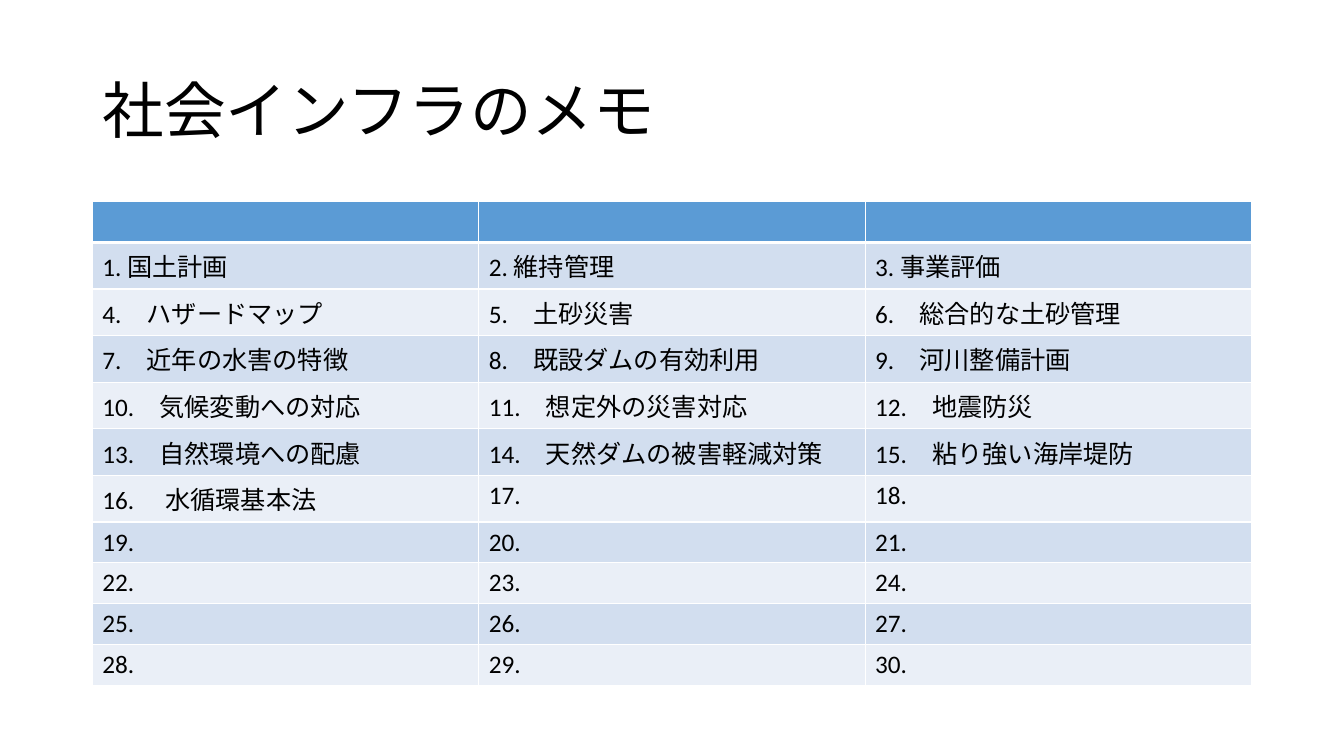
from dataclasses import dataclass

from lxml import etree
from pptx import Presentation
from pptx.dml.color import RGBColor
from pptx.enum.lang import MSO_LANGUAGE_ID
from pptx.enum.text import MSO_ANCHOR, MSO_AUTO_SIZE, PP_ALIGN
from pptx.oxml.ns import qn
from pptx.slide import Slide
from pptx.table import Table, _Cell
from pptx.text.text import TextFrame
from pptx.util import Pt

LEFT = PP_ALIGN.LEFT
MIDDLE = MSO_ANCHOR.MIDDLE
NO_AUTOFIT = MSO_AUTO_SIZE.NONE
JAPANESE = MSO_LANGUAGE_ID.JAPANESE
TITLE_ONLY = 5


@dataclass(frozen=True)
class Theme:
    font: str = "Calibri"
    title_size: float = 44
    cell_size: float = 18
    text: str = "000000"
    header: str = "5B9BD5"
    bands: tuple[str, str] = ("D2DEEF", "EAEFF7")
    border: str = "FFFFFF"
    thin: float = 1
    thick: float = 3


@dataclass(frozen=True)
class Memo:
    number: int
    topic: str = ""
    gap: str = "　"

    @property
    def label(self) -> str:
        return f"{self.number}.{self.gap}{self.topic}" if self.topic else f"{self.number}."


THEME = Theme()
MARGIN = 66
CONTENT_WIDTH = 828
COLUMNS = 3
ROW_HEIGHT = 29.2
MEMO_COUNT = 30
TOPICS = (
    "国土計画", "維持管理", "事業評価",
    "ハザードマップ", "土砂災害", "総合的な土砂管理",
    "近年の水害の特徴", "既設ダムの有効利用", "河川整備計画",
    "気候変動への対応", "想定外の災害対応", "地震防災",
    "自然環境への配慮", "天然ダムの被害軽減対策", "粘り強い海岸堤防",
    "水循環基本法",
)
SPECIAL_GAPS = {1: " ", 2: " ", 3: " ", 16: " 　"}


def write_text(frame: TextFrame, text: str, *, size: float,
               line_spacing: float = 1.0) -> None:
    para = frame.paragraphs[0]
    para.alignment = LEFT
    para.line_spacing = line_spacing
    span = para.add_run()
    span.text = text
    span.font.name = THEME.font
    span.font.size = Pt(size)
    span.font.bold = False
    span.font.color.rgb = RGBColor.from_string(THEME.text)
    span.font.language_id = JAPANESE


def style_cell(cell: _Cell, row: int) -> None:
    """Give the cell its borders, heavy under the header, and its band fill."""
    widths = {
        "a:lnL": THEME.thin,
        "a:lnR": THEME.thin,
        "a:lnT": THEME.thick if row == 1 else THEME.thin,
        "a:lnB": THEME.thick if row == 0 else THEME.thin,
    }
    properties = cell._tc.get_or_add_tcPr()
    for tag, width in widths.items():
        line = etree.SubElement(properties, qn(tag), w=str(Pt(width)))
        fill = etree.SubElement(line, qn("a:solidFill"))
        etree.SubElement(fill, qn("a:srgbClr"), val=THEME.border)
    colour = THEME.header if row == 0 else THEME.bands[(row - 1) % 2]
    cell.fill.solid()
    cell.fill.fore_color.rgb = RGBColor.from_string(colour)


def add_title(page: Slide, text: str) -> None:
    title = page.shapes.title
    title.left, title.top = Pt(MARGIN), Pt(28.75)
    title.width, title.height = Pt(CONTENT_WIDTH), Pt(104.4)
    title.text_frame.auto_size = NO_AUTOFIT
    title.text_frame.vertical_anchor = MIDDLE
    write_text(title.text_frame, text, size=THEME.title_size, line_spacing=0.9)


def add_memo_table(page: Slide, memos: list[Memo]) -> Table:
    row_count = 1 + len(memos) // COLUMNS
    table = page.shapes.add_table(
        row_count, COLUMNS, Pt(MARGIN), Pt(144),
        Pt(CONTENT_WIDTH), Pt(ROW_HEIGHT * row_count)).table
    for row in range(row_count):
        table.rows[row].height = Pt(ROW_HEIGHT)
        for column in range(COLUMNS):
            style_cell(table.cell(row, column), row)
    for index, memo in enumerate(memos):
        row, column = divmod(index, COLUMNS)
        write_text(table.cell(row + 1, column).text_frame, memo.label,
                   size=THEME.cell_size)
    return table


def main() -> None:
    deck = Presentation()
    deck.slide_width, deck.slide_height = Pt(960), Pt(540)
    page = deck.slides.add_slide(deck.slide_layouts[TITLE_ONLY])
    add_title(page, "社会インフラのメモ")
    memos = [Memo(number, topic, SPECIAL_GAPS.get(number, "　"))
             for number, topic in enumerate(TOPICS, start=1)]
    memos += [Memo(number) for number in range(len(TOPICS) + 1, MEMO_COUNT + 1)]
    add_memo_table(page, memos)
    deck.save("out.pptx")


if __name__ == "__main__":
    main()
